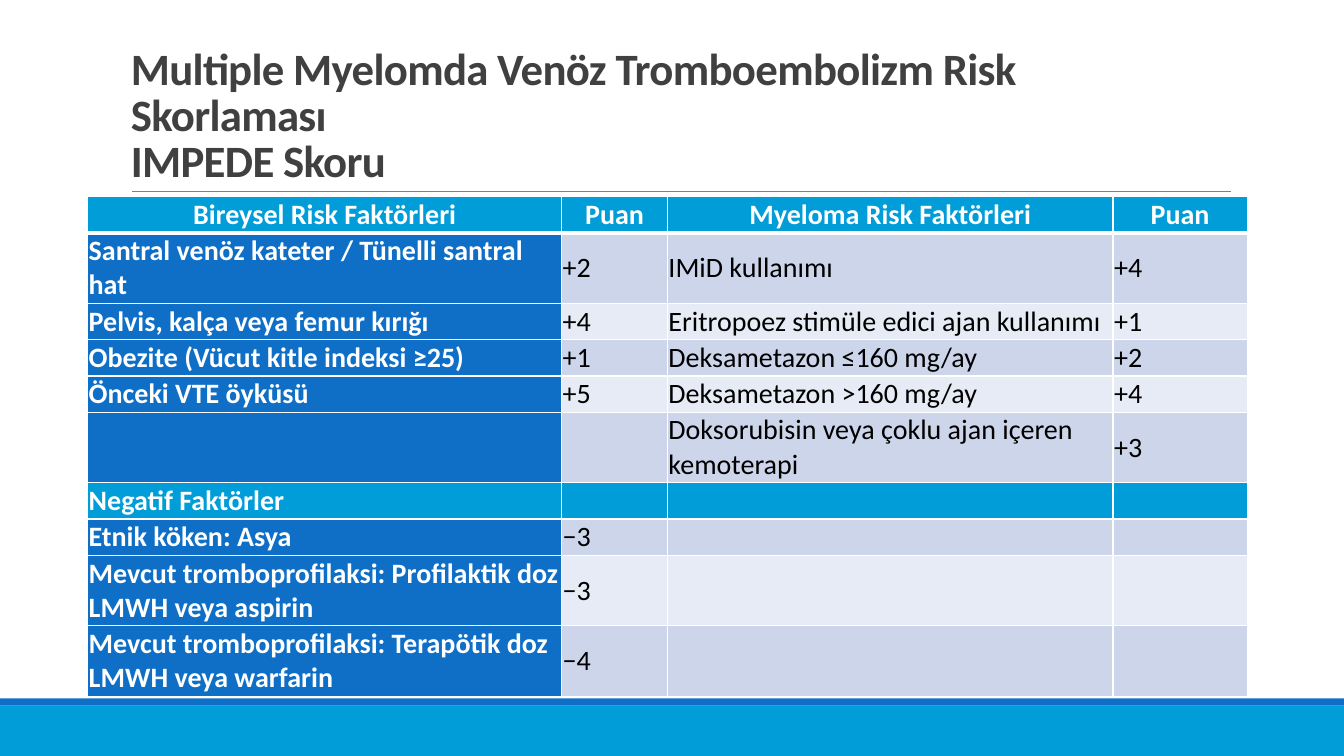
from lxml.etree import SubElement
from pptx import Presentation
from pptx.dml.color import RGBColor
from pptx.enum.shapes import MSO_CONNECTOR as Connector, MSO_SHAPE as Shape
from pptx.enum.text import MSO_ANCHOR as Anchor, PP_ALIGN as Align
from pptx.oxml.ns import qn
from pptx.util import Inches, Pt

FONT = "Calibri"
WHITE, BLACK, GRAY, DARK = "FFFFFF", "000000", "808080", "404040"
CYAN, BLUE = "009DD9", "0F6FC6"
BANDS = ["CCD5EA", "E7EBF5"]
TITLE = ["Multiple Myelomda Venöz Tromboembolizm Risk Skorlaması", "IMPEDE Skoru"]
SECTION_ROW = 6
COLUMN_WIDTHS = [4.7, 1.05, 4.42, 1.33]
SINGLE, DOUBLE = 0.36, 0.7
ROWS = [
    (SINGLE, ["Bireysel Risk Faktörleri", "Puan", "Myeloma Risk Faktörleri", "Puan"]),
    (DOUBLE, ["Santral venöz kateter / Tünelli santral hat", "+2", "IMiD kullanımı", "+4"]),
    (SINGLE, ["Pelvis, kalça veya femur kırığı", "+4",
              "Eritropoez stimüle edici ajan kullanımı", "+1"]),
    (SINGLE, ["Obezite (Vücut kitle indeksi ≥25)", "+1", "Deksametazon ≤160 mg/ay", "+2"]),
    (SINGLE, ["Önceki VTE öyküsü", "+5", "Deksametazon >160 mg/ay", "+4"]),
    (DOUBLE, ["", "", "Doksorubisin veya çoklu ajan içeren kemoterapi", "+3"]),
    (SINGLE, ["Negatif Faktörler", "", "", ""]),
    (SINGLE, ["Etnik köken: Asya", "−3", "", ""]),
    (DOUBLE, ["Mevcut tromboprofilaksi: Profilaktik doz LMWH veya aspirin", "−3", "", ""]),
    (DOUBLE, ["Mevcut tromboprofilaksi: Terapötik doz LMWH veya warfarin", "−4", "", ""]),
]


def color(value):
    return RGBColor.from_string(value)


def add_span(para, text, size, shade, bold):
    span = para.add_run()
    span.text = text
    span.font.name = FONT
    span.font.size = Pt(size)
    span.font.bold = bold
    span.font.color.rgb = color(shade)
    return span


def add_bar(page, left, top, width, height, shade):
    bar = page.shapes.add_shape(
        Shape.RECTANGLE, Inches(left), Inches(top), Inches(width), Inches(height))
    bar.shadow.inherit = False
    bar.fill.solid()
    bar.fill.fore_color.rgb = color(shade)
    bar.line.fill.background()


def add_footer(page, left, top, width, height):
    stripe = 0.07
    add_bar(page, left, top + stripe, width, height - stripe, CYAN)
    add_bar(page, left, top, width, stripe, BLUE)


def add_title(page, left, top, width, height):
    bottom = Inches(top + height)
    rule = page.shapes.add_connector(
        Connector.STRAIGHT, Inches(left + 0.11), bottom, Inches(left + 11.01), bottom)
    rule.line.color.rgb = color(GRAY)
    rule.line.width = Pt(0.5)
    SubElement(rule._element.spPr, qn("a:effectLst"))

    box = page.shapes.add_textbox(Inches(left), Inches(top), Inches(width), Inches(height))
    frame = box.text_frame
    frame.word_wrap = True
    frame.vertical_anchor = Anchor.BOTTOM
    para = frame.paragraphs[0]
    para.line_spacing = 0.85
    for index, text in enumerate(TITLE):
        if index:
            para.add_line_break()
        span = add_span(para, text, 32, DARK, True)
        span.font._element.set("spc", "-50")


def add_borders(cell, row):
    properties = cell._tc.get_or_add_tcPr()
    thick_edge = {0: "lnB", 1: "lnT"}.get(row)
    for edge in ("lnL", "lnR", "lnT", "lnB"):
        points = 3 if edge == thick_edge else 1
        line = SubElement(properties, qn(f"a:{edge}"), w=str(Pt(points)))
        fill = SubElement(line, qn("a:solidFill"))
        SubElement(fill, qn("a:srgbClr"), val=WHITE)


def fill_cell(cell, row, column, text):
    is_heading = row in (0, SECTION_ROW)
    emphasized = is_heading or column == 0
    if is_heading:
        shade = CYAN
    elif column == 0:
        shade = BLUE
    else:
        shade = BANDS[(row - 1) % 2]
    add_borders(cell, row)
    cell.fill.solid()
    cell.fill.fore_color.rgb = color(shade)
    cell.vertical_anchor = Anchor.MIDDLE
    cell.margin_left = cell.margin_right = Inches(0.01)
    cell.margin_top = cell.margin_bottom = Inches(0.01)
    para = cell.text_frame.paragraphs[0]
    para.alignment = Align.CENTER if row == 0 else Align.LEFT
    if text:
        add_span(para, text, 20, WHITE if emphasized else BLACK, emphasized)


def add_score_table(page, left, top, width):
    height = sum(row_height for row_height, _ in ROWS)
    table = page.shapes.add_table(
        len(ROWS), len(COLUMN_WIDTHS),
        Inches(left), Inches(top), Inches(width), Inches(height)).table
    for column, share in zip(table.columns, COLUMN_WIDTHS):
        column.width = Inches(width * share / sum(COLUMN_WIDTHS))
    for row, (row_height, texts) in enumerate(ROWS):
        table.rows[row].height = Inches(row_height)
        for column, text in enumerate(texts):
            fill_cell(table.cell(row, column), row, column, text)


def main():
    deck = Presentation()
    deck.slide_width = Inches(13.33)
    deck.slide_height = Inches(7.5)
    page = deck.slides.add_slide(deck.slide_layouts[6])
    add_footer(page, 0, 6.93, 13.33, 0.57)
    add_title(page, 1.2, 0.31, 11, 1.59)
    add_score_table(page, 0.87, 1.95, 11.5)
    deck.save("out.pptx")


if __name__ == "__main__":
    main()
